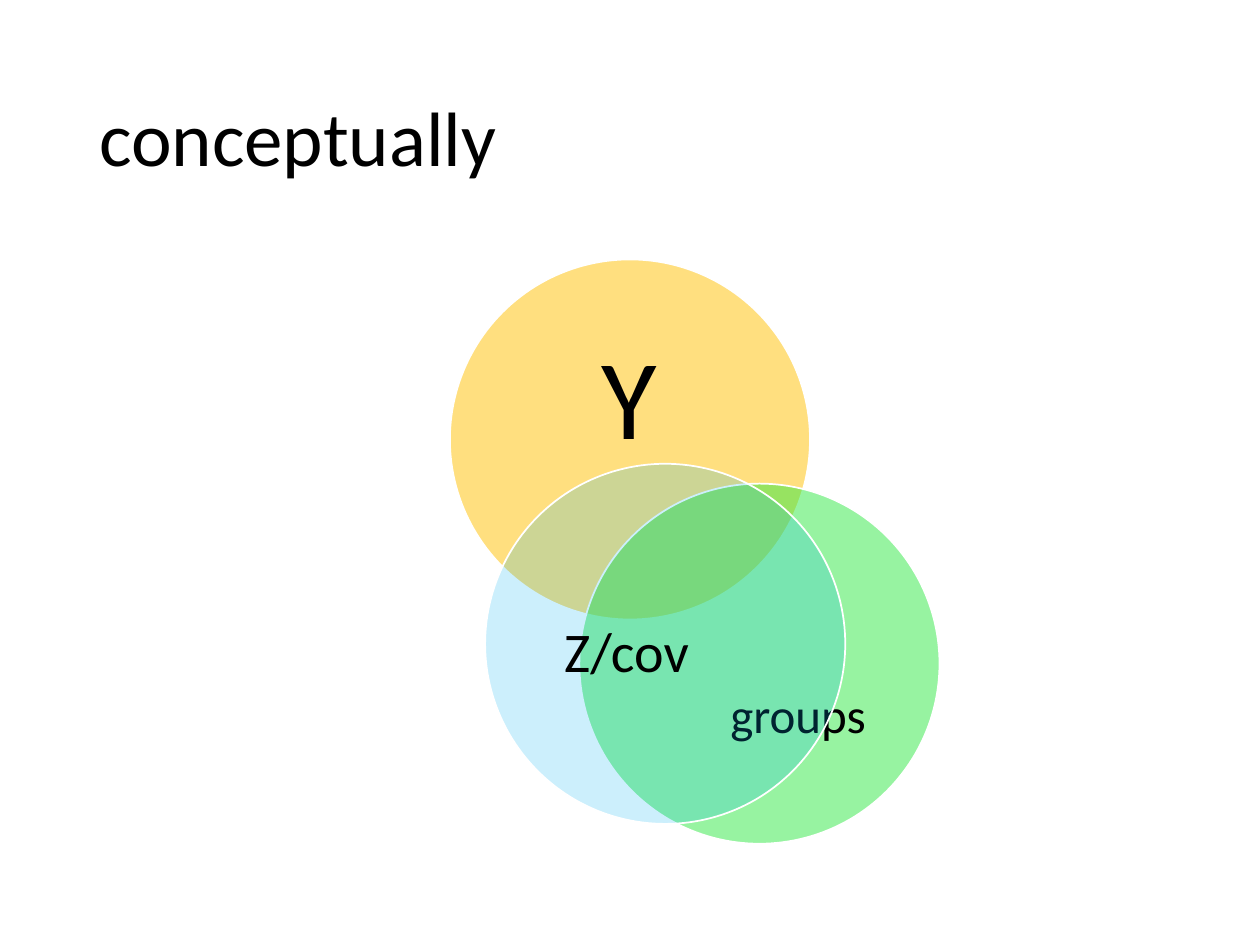
import pptx
import pptx.util
import pptx.dml.color
import pptx.enum.shapes
import pptx.enum.text
import pptx.oxml.ns
import lxml.etree

Cm = pptx.util.Cm
Pt = pptx.util.Pt
RGBColor = pptx.dml.color.RGBColor
PP_ALIGN = pptx.enum.text.PP_ALIGN

BLACK = RGBColor(0x00, 0x00, 0x00)
WHITE = RGBColor(0xFF, 0xFF, 0xFF)
AMBER = RGBColor(0xFF, 0xC0, 0x00)
GREEN = RGBColor(0x30, 0xE8, 0x45)
BLUE = RGBColor(0x00, 0xB0, 0xF0)

FONT = "Calibri"
DIAMETER = 7.26
INSETS_TITLE = (0.25, 0.13, 0.25, 0.13)
INSETS_NONE = (0, 0, 0, 0)
INSETS_LOWERED = (0, 1.7, 0, 0)

# Back to front: circle (left, top), colour, opacity %,
# then label, label box (left, top, width, height), size, insets
SETS = [
    ((9.07, 5.23), AMBER, 50, "Y", (10.03, 6.5, 5.31, 3.25), 65, INSETS_NONE),
    ((11.68, 9.75), GREEN, 50, "groups", (13.92, 11.63, 4.34, 3.99), 28, INSETS_LOWERED),
    ((9.78, 9.35), BLUE, 20, "Z/cov", (10.46, 11.2, 4.34, 3.99), 32, INSETS_NONE),
]


def add_text(slide, text, box, size, align, insets):
    frame = slide.shapes.add_textbox(*map(Cm, box)).text_frame
    frame.word_wrap = True
    frame.vertical_anchor = pptx.enum.text.MSO_ANCHOR.MIDDLE
    (frame.margin_left, frame.margin_top,
     frame.margin_right, frame.margin_bottom) = map(Cm, insets)
    paragraph = frame.paragraphs[0]
    paragraph.alignment = align
    paragraph.line_spacing = 0.9
    run = paragraph.add_run()
    run.text = text
    run.font.name = FONT
    run.font.size = Pt(size)
    run.font.color.rgb = BLACK


def add_circle(slide, corner, colour, opacity):
    circle = slide.shapes.add_shape(
        pptx.enum.shapes.MSO_SHAPE.OVAL,
        *map(Cm, corner), Cm(DIAMETER), Cm(DIAMETER))
    circle.shadow.inherit = False
    circle.fill.solid()
    circle.fill.fore_color.rgb = colour
    circle.line.color.rgb = WHITE
    circle.line.width = Pt(1)
    # Transparency of the fill
    qn = pptx.oxml.ns.qn
    fill_colour = circle.fill._xPr.find(qn("a:solidFill")).find(qn("a:srgbClr"))
    alpha = lxml.etree.SubElement(fill_colour, qn("a:alpha"))
    alpha.set("val", str(opacity * 1000))


def main():
    deck = pptx.Presentation()
    deck.slide_width, deck.slide_height = Cm(25.4), Cm(19.05)
    slide = deck.slides.add_slide(deck.slide_layouts[6])

    # Title
    add_text(slide, "conceptually", (1.75, 1.01, 21.9, 3.68), 44,
             PP_ALIGN.LEFT, INSETS_TITLE)

    # Overlapping sets with their labels
    for corner, colour, opacity, label, box, size, insets in SETS:
        add_circle(slide, corner, colour, opacity)
        add_text(slide, label, box, size, PP_ALIGN.CENTER, insets)

    deck.save("out.pptx")


if __name__ == "__main__":
    main()
